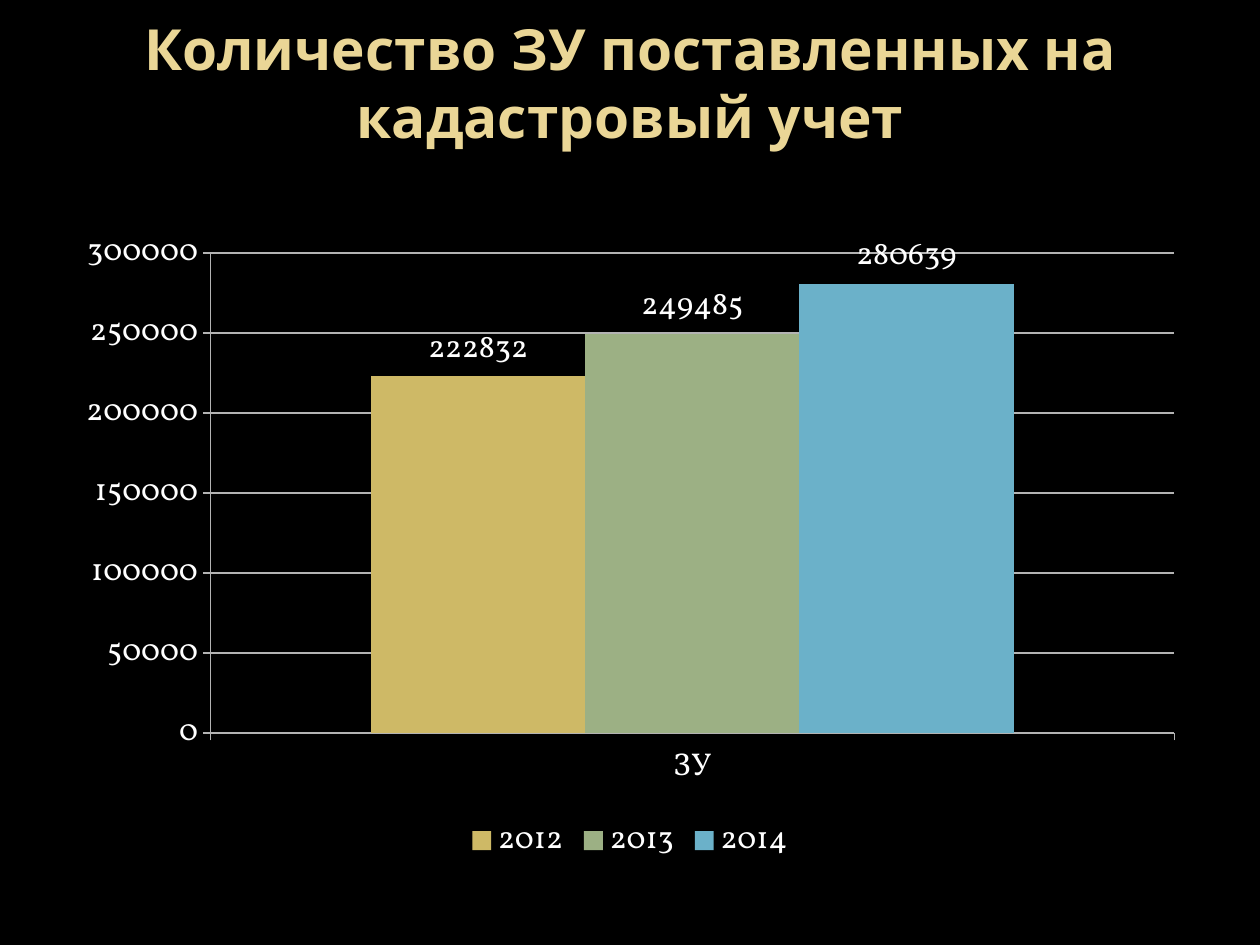
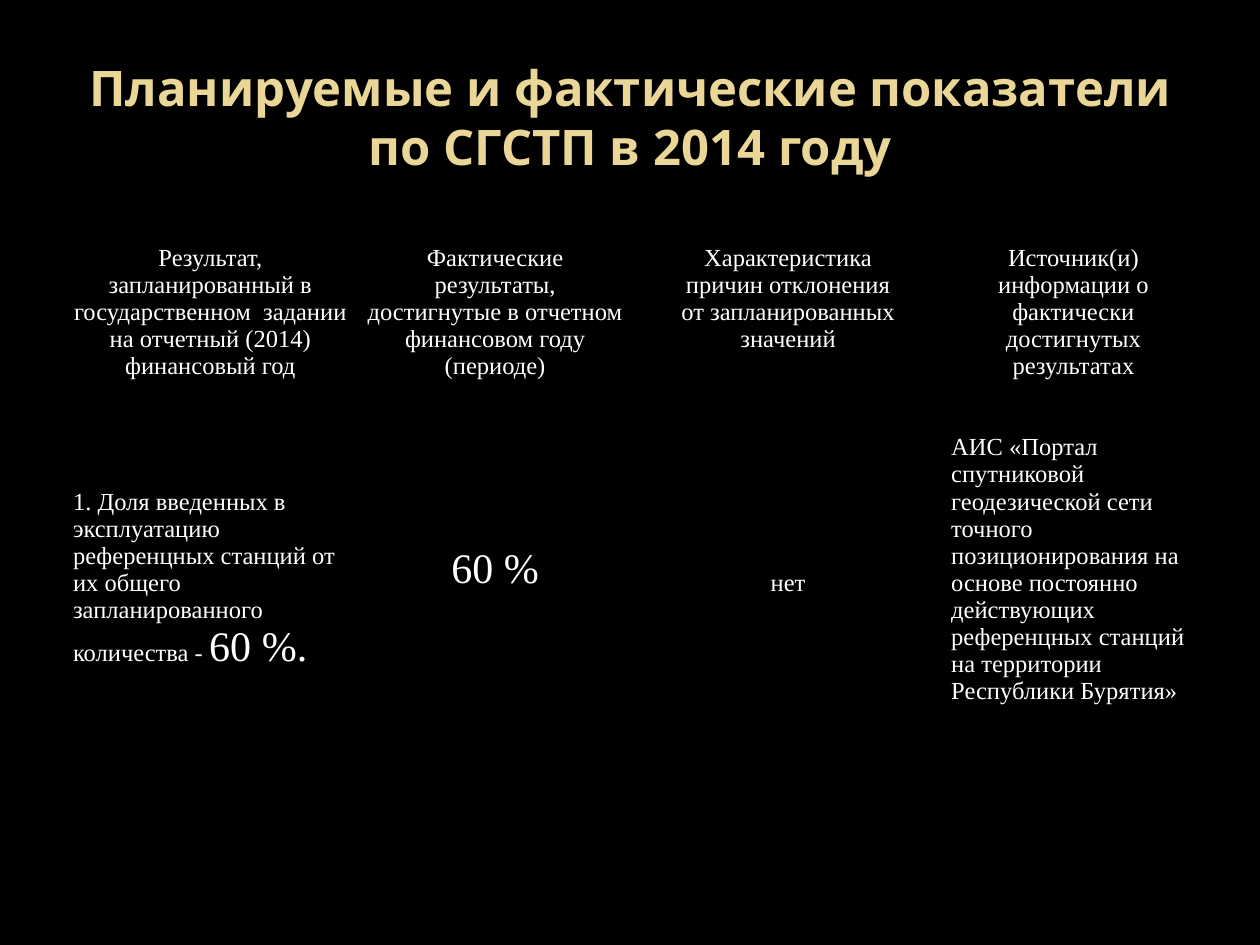
from lxml.etree import SubElement
from pptx import Presentation
from pptx.chart.data import CategoryChartData
from pptx.dml.color import RGBColor
from pptx.enum.chart import XL_CHART_TYPE as ChartType
from pptx.enum.chart import XL_LABEL_POSITION as LabelPos
from pptx.enum.chart import XL_LEGEND_POSITION as LegendPos
from pptx.enum.chart import XL_TICK_MARK as Tick
from pptx.enum.text import MSO_ANCHOR as Anchor
from pptx.enum.text import PP_ALIGN as Align
from pptx.oxml import parse_xml
from pptx.oxml.ns import nsdecls, qn
from pptx.util import Inches, Pt

BLACK, WHITE, GOLD, GRID = "000000", "FFFFFF", "EAD696", "B3B3B3"
TITLE_FONT, TABLE_FONT, CHART_FONT = "Noto Sans", "Times New Roman", "Vollkorn"
TITLE_BOX = (0.5, 0.3, 9, 1.25)
CHART_BOX = (0.5, 1.75, 9, 5.15)
TABLE_BOX = (0.51, 1.94, 9.05, 3.86)
PLOT_SHARES = {"x": 0.13, "y": 0.05, "w": 0.85, "h": 0.74}
COLUMN_WIDTHS = (2.32, 2.2, 2.45, 2.08)
ROW_HEIGHTS = (1.29, 2.57)
LINE = 0.215

PARCELS = [
    ("2012", 222832, "CEB966"),
    ("2013", 249485, "9CB084"),
    ("2014", 280639, "6BB1C9"),
]

HEADINGS = [
    ["Результат, запланированный в государственном  задании на отчетный (2014) финансовый год"],
    ["Фактические результаты,", "достигнутые в отчетном", "финансовом году (периоде)"],
    ["Характеристика", "причин отклонения", "от запланированных значений"],
    ["Источник(и) информации о фактически достигнутых результатах"],
]
PLANNED = "1. Доля введенных в эксплуатацию референцных станций от их общего запланированного количества - "
SOURCE = (
    "АИС «Портал спутниковой геодезической сети точного позиционирования на основе "
    "постоянно действующих референцных станций на территории Республики Бурятия»"
)


def rgb(color):
    return RGBColor.from_string(color)


def set_font(font, name, size, color, bold=False):
    font.name, font.size, font.bold = name, Pt(size), bold
    font.color.rgb = rgb(color)


def add_slide(deck, title, size, lift=0):
    slide = deck.slides.add_slide(deck.slide_layouts[6])
    slide.background.fill.solid()
    slide.background.fill.fore_color.rgb = rgb(BLACK)
    frame = slide.shapes.add_textbox(*map(Inches, TITLE_BOX)).text_frame
    frame.word_wrap = True
    frame.vertical_anchor = Anchor.MIDDLE
    frame.margin_bottom = Inches(0.05 + lift)
    heading = frame.paragraphs[0]
    heading.text = title
    heading.alignment = Align.CENTER
    set_font(heading.font, TITLE_FONT, size, GOLD, True)
    return slide


def place_plot(chart):
    plot_area = chart.element.chart.plotArea
    for old in plot_area.findall(qn("c:layout")):
        plot_area.remove(old)
    layout = parse_xml(f"<c:layout {nsdecls('c')}><c:manualLayout/></c:layout>")
    settings = {"layoutTarget": "inner", "xMode": "edge", "yMode": "edge", **PLOT_SHARES}
    for tag, value in settings.items():
        SubElement(layout[0], qn(f"c:{tag}")).set("val", str(value))
    plot_area.insert(0, layout)


def add_parcel_chart(slide, box):
    data = CategoryChartData(number_format="General")
    data.categories = ["ЗУ"]
    for year, count, _ in PARCELS:
        data.add_series(year, [count])
    chart = slide.shapes.add_chart(ChartType.COLUMN_CLUSTERED, *map(Inches, box), data).chart
    set_font(chart.font, CHART_FONT, 18, WHITE)
    chart.has_title = False
    chart.has_legend = True
    chart.legend.position = LegendPos.BOTTOM
    chart.legend.include_in_layout = False
    place_plot(chart)

    for axis in (chart.category_axis, chart.value_axis):
        axis.major_tick_mark = Tick.OUTSIDE
        axis.minor_tick_mark = Tick.NONE
        axis.format.line.color.rgb = rgb(GRID)
    counts = chart.value_axis
    counts.minimum_scale, counts.maximum_scale, counts.major_unit = 0, 300000, 50000
    counts.has_major_gridlines = True
    counts.major_gridlines.format.line.color.rgb = rgb(GRID)

    plot = chart.plots[0]
    plot.gap_width, plot.overlap = 150, 0
    plot.vary_by_categories = False
    for series, (_, _, color) in zip(plot.series, PARCELS):
        series.format.fill.solid()
        series.format.fill.fore_color.rgb = rgb(color)
        labels = series.data_labels
        labels.show_value = True
        labels.position = LabelPos.OUTSIDE_END
        set_font(labels.font, CHART_FONT, 18, WHITE)


def style_cell(cell):
    cell.margin_left = cell.margin_right = Inches(0.07)
    cell.margin_top = cell.margin_bottom = 0
    properties = cell._tc.get_or_add_tcPr()
    for side in ("lnL", "lnR", "lnT", "lnB"):
        properties.append(parse_xml(
            f'<a:{side} {nsdecls("a")} w="12700"><a:solidFill>'
            f'<a:srgbClr val="{BLACK}"/></a:solidFill></a:{side}>'))
    cell.fill.solid()
    cell.fill.fore_color.rgb = rgb(BLACK)


def fill_cell(cell, lines, size=14, align=Align.CENTER, lines_above=0):
    style_cell(cell)
    cell.margin_top = Inches(lines_above * LINE)
    cell.text = "\n".join(lines)
    for paragraph in cell.text_frame.paragraphs:
        paragraph.alignment = align
        set_font(paragraph.font, TABLE_FONT, size, WHITE)


def add_indicator_table(slide, box):
    table = slide.shapes.add_table(2, 4, *map(Inches, box)).table
    table.first_row = table.horz_banding = False
    for column, width in zip(table.columns, COLUMN_WIDTHS):
        column.width = Inches(width)
    for row, height in zip(table.rows, ROW_HEIGHTS):
        row.height = Inches(height)
    for index, heading in enumerate(HEADINGS):
        fill_cell(table.cell(0, index), heading)

    planned, actual, reasons, source = (table.cell(1, index) for index in range(4))
    fill_cell(planned, [PLANNED], align=Align.LEFT, lines_above=3)
    share = planned.text_frame.paragraphs[0].add_run()
    share.text = "60 %."
    share.font.size = Pt(24)
    fill_cell(actual, ["60 %"], size=24)
    actual.vertical_anchor = Anchor.MIDDLE
    fill_cell(reasons, ["нет"], lines_above=6)
    fill_cell(source, [SOURCE], align=Align.LEFT, lines_above=1)


def main():
    deck = Presentation()
    deck.slide_width, deck.slide_height = Inches(10), Inches(7.5)
    parcels = add_slide(deck, "Количество ЗУ поставленных на кадастровый учет", 32.4, lift=0.55)
    add_parcel_chart(parcels, CHART_BOX)
    indicators = add_slide(deck, "Планируемые и фактические показатели по СГСТП в 2014 году", 28)
    add_indicator_table(indicators, TABLE_BOX)
    deck.save("out.pptx")


if __name__ == "__main__":
    main()
